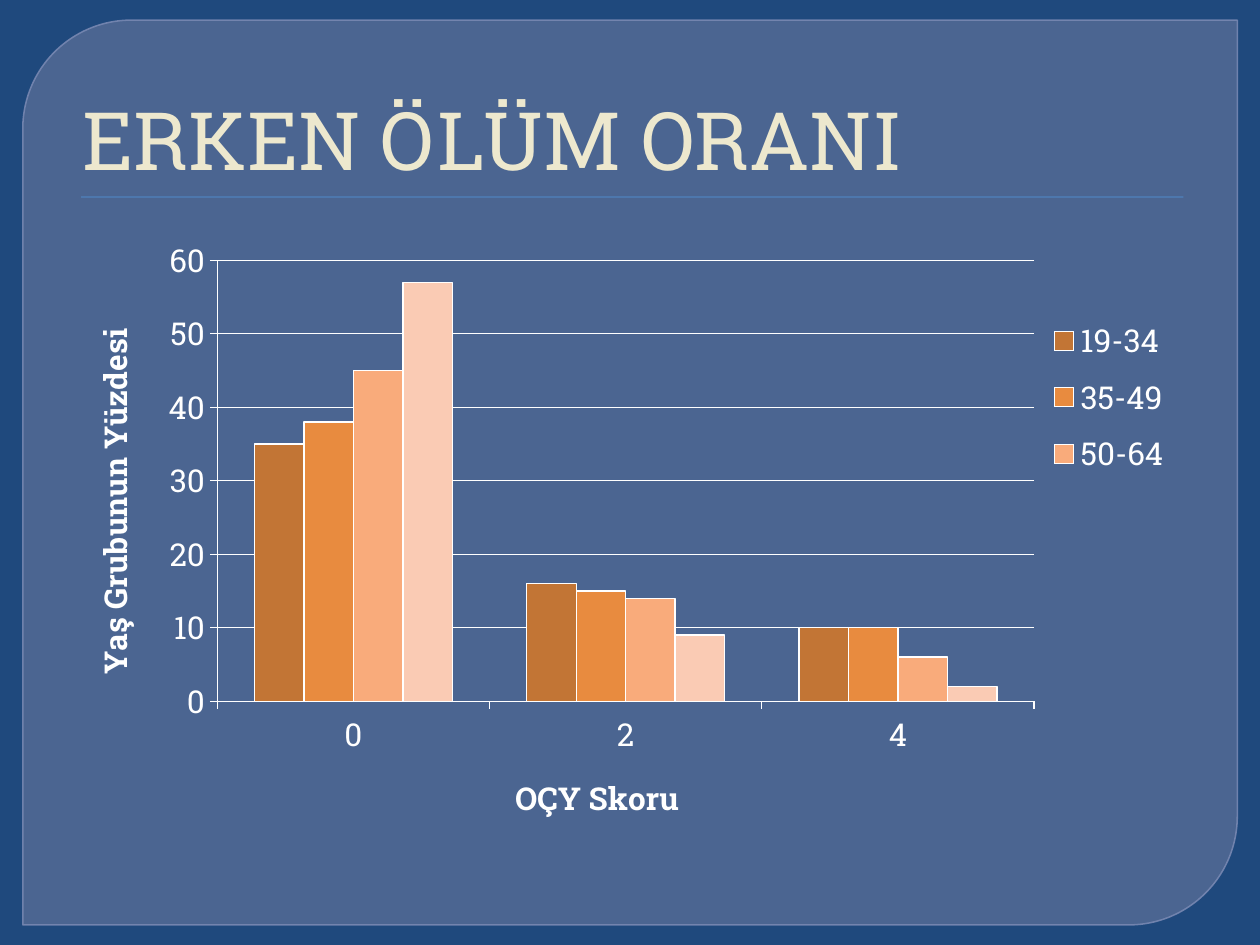
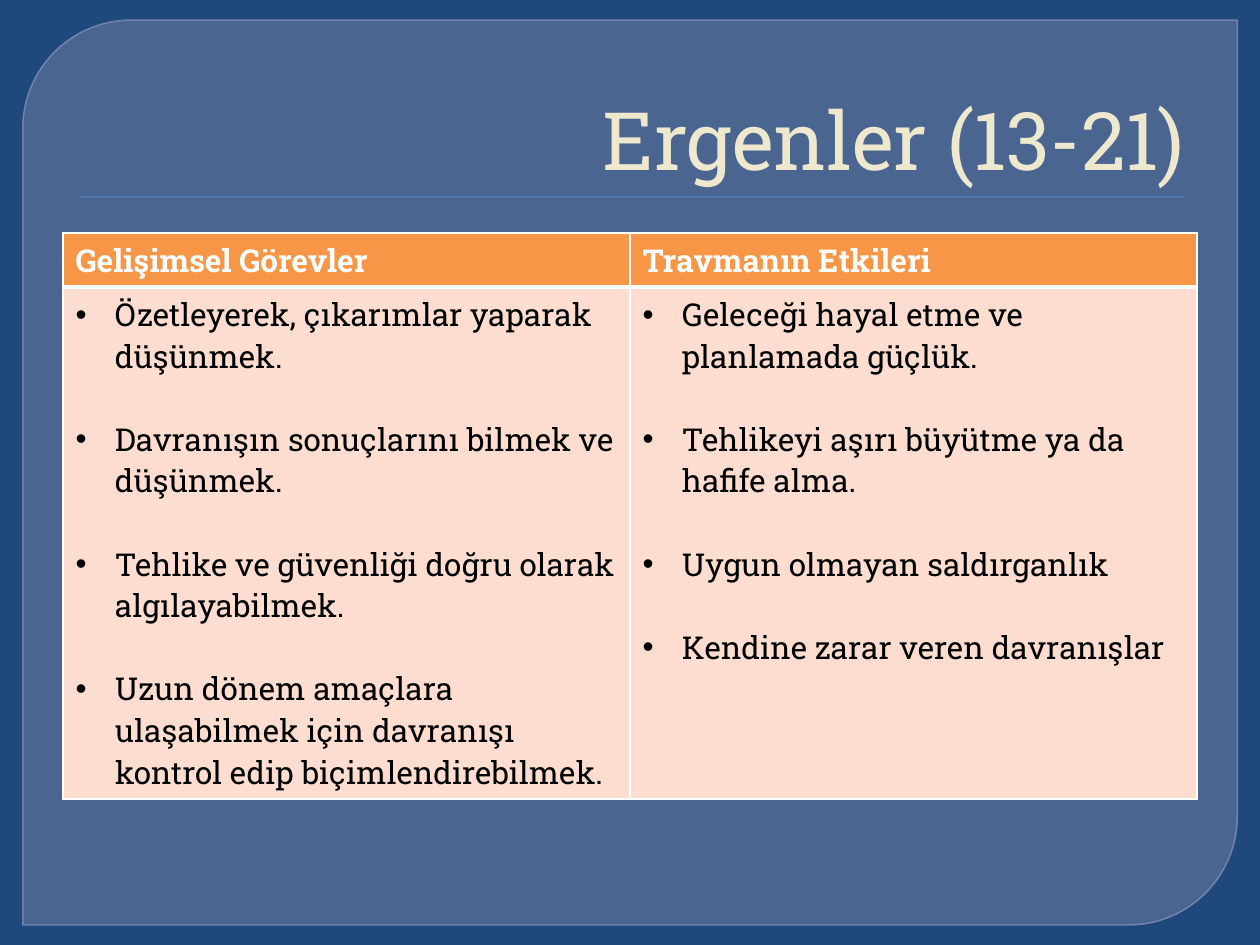
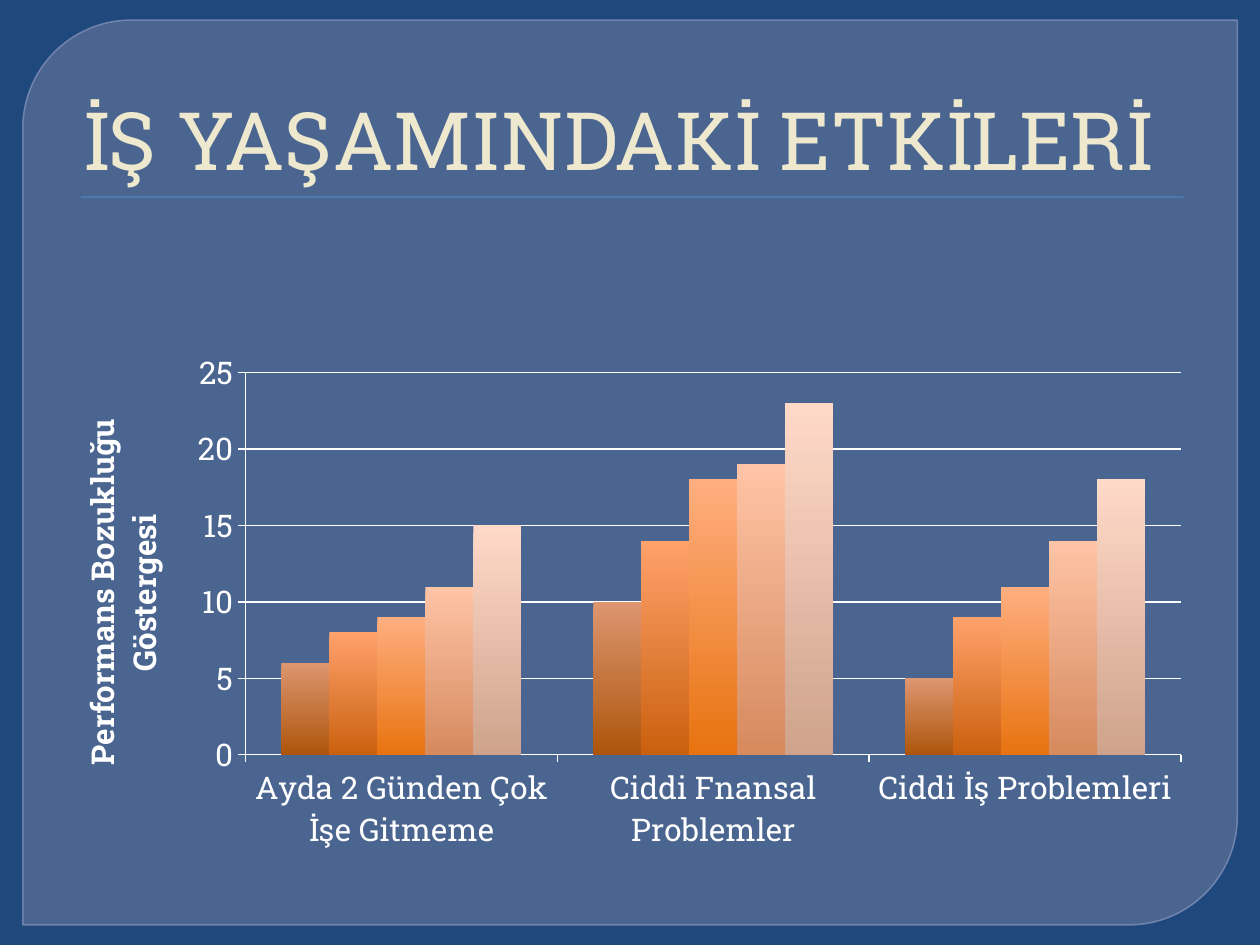
from dataclasses import dataclass

from lxml.etree import SubElement
from pptx import Presentation
from pptx.chart.data import CategoryChartData
from pptx.dml.color import RGBColor as RGB
from pptx.enum.chart import XL_CHART_TYPE as CT, XL_LEGEND_POSITION as LP, XL_TICK_MARK as TICK
from pptx.enum.shapes import MSO_SHAPE as SHAPE
from pptx.enum.text import MSO_ANCHOR as ANCHOR, PP_ALIGN as ALIGN
from pptx.oxml.ns import qn
from pptx.util import Pt


@dataclass(frozen=True)
class Theme:
    font: str = "Roboto Slab"
    title_size: int = 46
    body_size: int = 18
    back: str = "1F497D"
    panel: str = "63759D"
    panel_line: str = "7989B3"
    rule: str = "4F81BD"
    title: str = "EDE8CE"
    light: str = "FFFFFF"
    dark: str = "000000"
    head_fill: str = "F79646"
    body_fill: str = "FCDDCF"
    age_fills: tuple = ("C27535", "E88B3F", "F9AB7B", "FACBB4")
    score_fills: tuple = (("DD9670", "AD550C"), ("FFA16B", "CA610F"), ("FFAE80", "E87310"),
                          ("FFC4A6", "D68A5E"), ("FFD9C8", "CFA38C"))


T = Theme()
LEFT, WIDTH = 36, 648
CHART_TOP, CHART_HEIGHT = 129.6, 356.4


def apply(obj, values):
    for name, value in values.items():
        setattr(obj, name, value)


def style_font(font, color, size=T.body_size, bold=False):
    apply(font, {"name": T.font, "size": Pt(size), "bold": bold})
    font.color.rgb = RGB.from_string(color)


def paint(fill, color, alpha=None):
    fill.solid()
    fill.fore_color.rgb = RGB.from_string(color)
    if alpha is not None:
        clr = fill._xPr.find(".//" + qn("a:srgbClr"))
        SubElement(clr, qn("a:alpha"), val=str(alpha * 1000))


def add_block(s, kind, box, color, alpha=None):
    sp = s.shapes.add_shape(kind, *map(Pt, box))
    sp.shadow.inherit = False
    paint(sp.fill, color, alpha)
    sp.line.fill.background()
    return sp


def add_title(s, text, align):
    tf = s.shapes.add_textbox(*map(Pt, (LEFT, 20, WIDTH, 90))).text_frame
    apply(tf, {"word_wrap": True, "vertical_anchor": ANCHOR.BOTTOM})
    p = tf.paragraphs[0]
    p.alignment = align
    p._p.get_or_add_pPr().set("marL", str(Pt(4)))
    r = p.add_run()
    r.text = text
    style_font(r.font, T.title, T.title_size)


def add_slide(prs, title, align=ALIGN.LEFT):
    s = prs.slides.add_slide(prs.slide_layouts[6])
    paint(s.background.fill, T.back)
    panel = add_block(s, SHAPE.ROUND_2_DIAG_RECTANGLE, (13, 11.5, 694, 517), T.panel, 65)
    panel.adjustments[0] = 0.12
    panel.adjustments[1] = 0
    panel.line.width = Pt(0.87)
    paint(panel.line.fill, T.panel_line, 88)
    add_block(s, SHAPE.RECTANGLE, (46.3, 112.2, 630, 0.75), T.rule)
    add_title(s, title, align)
    return s


def place(el, box, inner=False):
    for old in el.findall(qn("c:layout")):
        el.remove(old)
    layout = el.makeelement(qn("c:layout"))
    manual = SubElement(layout, qn("c:manualLayout"))
    if inner:
        SubElement(manual, qn("c:layoutTarget"), val="inner")
    for key in ("xMode", "yMode"):
        SubElement(manual, qn(f"c:{key}"), val="edge")
    for key, length, whole in zip("xywh", box, (WIDTH, CHART_HEIGHT) * 2):
        SubElement(manual, qn(f"c:{key}"), val=str(length / whole))
    overlay = el.find(qn("c:overlay"))
    if overlay is None:
        el.insert(0, layout)
    else:
        overlay.addprevious(layout)


def add_axis_title(axis, text, x, y, turned=False):
    tf = axis.axis_title.text_frame
    r = tf.paragraphs[0].add_run()
    r.text = text
    style_font(r.font, T.light, bold=True)
    if turned:
        tf._txBody.bodyPr.set("rot", "-5400000")
        tf._txBody.bodyPr.set("vert", "horz")
    place(axis.axis_title._element, (x, y))


def style_line(line, color=T.light):
    line.width = Pt(0.75)
    paint(line.fill, color)


def fill_series(series, color):
    fill = series.format.fill
    if isinstance(color, str):
        paint(fill, color)
        style_line(series.format.line)
        return
    fill.gradient()
    fill.gradient_angle = 270
    for stop, shade, pos in zip(fill.gradient_stops, color, (0, 1)):
        stop.color.rgb = RGB.from_string(shade)
        stop.position = pos


def add_columns(s, cats, series, colors, top, step, plot):
    data = CategoryChartData()
    data.categories = cats
    for name, values in series:
        data.add_series(name, values)
    box = map(Pt, (LEFT, CHART_TOP, WIDTH, CHART_HEIGHT))
    chart = s.shapes.add_chart(CT.COLUMN_CLUSTERED, *box, data).chart
    apply(chart, {"has_title": False, "has_legend": False})
    style_font(chart.font, T.light)
    apply(chart.plots[0], {"gap_width": 150, "overlap": 0, "vary_by_categories": False})
    for ser, color in zip(chart.plots[0].series, colors):
        fill_series(ser, color)
    for axis in (chart.category_axis, chart.value_axis):
        apply(axis, {"major_tick_mark": TICK.OUTSIDE, "minor_tick_mark": TICK.NONE})
        style_line(axis.format.line)
    apply(chart.value_axis, {"minimum_scale": 0, "maximum_scale": top, "major_unit": step,
                             "has_major_gridlines": True})
    style_line(chart.value_axis.major_gridlines.format.line)
    place(chart._chartSpace.chart.plotArea, plot, inner=True)
    return chart


def add_legend(chart, unlisted, box):
    chart.has_legend = True
    legend = chart.legend
    apply(legend, {"position": LP.RIGHT, "include_in_layout": False})
    style_font(legend.font, T.light)
    el = legend._element
    entry = el.makeelement(qn("c:legendEntry"))
    SubElement(entry, qn("c:idx"), val=str(unlisted))
    SubElement(entry, qn("c:delete"), val="1")
    el.find(qn("c:legendPos")).addnext(entry)
    place(el, box)


def add_borders(cell, top, bottom):
    tcPr = cell._tc.get_or_add_tcPr()
    for side, width in {"L": 1, "R": 1, "T": top, "B": bottom}.items():
        ln = SubElement(tcPr, qn(f"a:ln{side}"), w=str(Pt(width)))
        SubElement(SubElement(ln, qn("a:solidFill")), qn("a:srgbClr"), val=T.light)


def set_bullet(p):
    pPr = p._p.get_or_add_pPr()
    for name, value in {"marL": Pt(22.5), "indent": -Pt(22.5)}.items():
        pPr.set(name, str(value))
    SubElement(pPr, qn("a:buFont"), typeface="Arial")
    SubElement(pPr, qn("a:buChar"), char="•")


def fill_cell(cell, lines, head):
    add_borders(cell, *((1, 3) if head else (3, 1)))
    paint(cell.fill, T.head_fill if head else T.body_fill)
    tf = cell.text_frame
    for i, line in enumerate(lines):
        p = tf.paragraphs[0] if i == 0 else tf.add_paragraph()
        if i:
            p.space_before = Pt(23.75)
        r = p.add_run()
        r.text = line
        style_font(r.font, T.light if head else T.dark, bold=head)
        if not head:
            set_bullet(p)


def add_columns_table(s, columns):
    heights = (30.9, 292.5)
    box = map(Pt, (LEFT, 133.2, WIDTH, sum(heights)))
    table = s.shapes.add_table(2, len(columns), *box).table
    table.horz_banding = False
    for row, height in zip(table.rows, heights):
        row.height = Pt(height)
    for c, (head, items) in enumerate(columns.items()):
        fill_cell(table.cell(0, c), [head], True)
        fill_cell(table.cell(1, c), items, False)


def main():
    prs = Presentation()
    apply(prs, {"slide_width": Pt(720), "slide_height": Pt(540)})

    s = add_slide(prs, "ERKEN ÖLÜM ORANI")
    ages = [("19-34", (35, 16, 10)), ("35-49", (38, 15, 10)),
            ("50-64", (45, 14, 6)), ("", (57, 9, 2))]
    chart = add_columns(s, ["0", "2", "4"], ages, T.age_fills, 60, 10, (88.2, 19.2, 466.8, 252))
    add_axis_title(chart.category_axis, "OÇY Skoru", 255.2, 309.2)
    add_axis_title(chart.value_axis, "Yaş Grubunun Yüzdesi", 12.6, 55, turned=True)
    add_legend(chart, 3, (555.8, 45, 84, 105))

    s = add_slide(prs, "Ergenler (13-21)", ALIGN.RIGHT)
    add_columns_table(s, {
        "Gelişimsel Görevler": [
            "Özetleyerek, çıkarımlar yaparak düşünmek.",
            "Davranışın sonuçlarını bilmek ve düşünmek.",
            "Tehlike ve güvenliği doğru olarak algılayabilmek.",
            "Uzun dönem amaçlara ulaşabilmek için davranışı kontrol edip biçimlendirebilmek.",
        ],
        "Travmanın Etkileri": [
            "Geleceği hayal etme ve planlamada güçlük.",
            "Tehlikeyi aşırı büyütme ya da hafife alma.",
            "Uygun olmayan saldırganlık",
            "Kendine zarar veren davranışlar",
        ],
    })

    s = add_slide(prs, "İŞ YAŞAMINDAKİ ETKİLERİ")
    scores = [("", values) for values in
              ((6, 10, 5), (8, 14, 9), (9, 18, 11), (11, 19, 14), (15, 23, 18))]
    problems = ["Ayda 2 Günden Çok İşe Gitmeme", "Ciddi Fnansal Problemler",
                "Ciddi İş Problemleri"]
    chart = add_columns(s, problems, scores, T.score_fills, 25, 5, (104.3, 84, 534.6, 220.5))
    add_axis_title(chart.value_axis, "Performans Bozukluğu Göstergesi", 5.5, 109, turned=True)

    prs.save("out.pptx")


if __name__ == "__main__":
    main()
